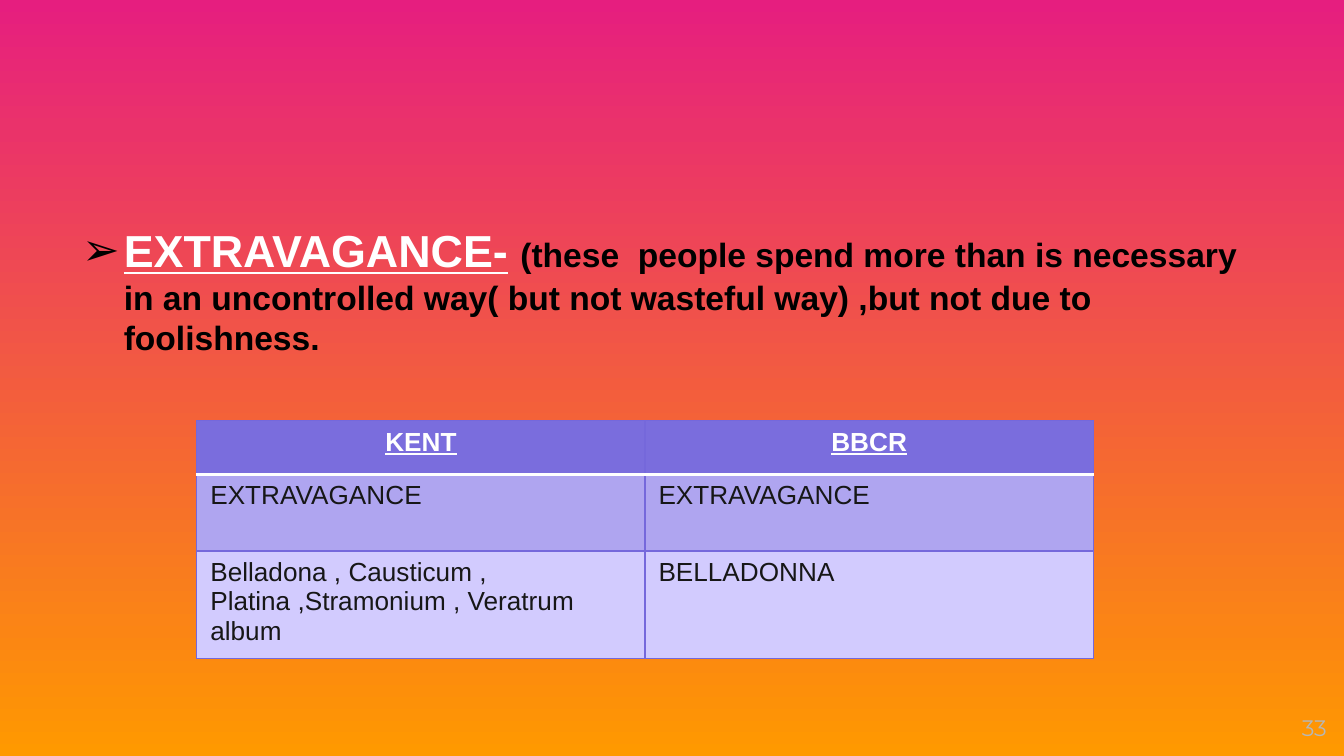
from dataclasses import dataclass

from lxml import etree
from pptx import Presentation, util as u
from pptx.dml.color import RGBColor
from pptx.enum import text
from pptx.oxml.ns import qn

WIDTH = 10
HEIGHT = WIDTH * 9 / 16
WHITE, BLACK, INK, GREY = "FFFFFF", "000000", "171717", "B7B7B7"
PINK, ORANGE = "E61E7F", "FF9900"
VIOLET, LILAC, PALE, GRID = "7A6DDD", "AFA5F0", "D2CBFE", "7568DB"


@dataclass(frozen=True)
class Area:
    """Percentages of the slide's width and height."""
    left: float
    top: float
    width: float
    height: float

    def lengths(self) -> tuple:
        across, down = WIDTH / 100, HEIGHT / 100
        return (u.Inches(self.left * across), u.Inches(self.top * down),
                u.Inches(self.width * across), u.Inches(self.height * down))


@dataclass(frozen=True)
class RemedyRow:
    kent: str
    bbcr: str
    height: float
    fill: str
    heading: bool = False


REMEDIES = (
    RemedyRow("KENT", "BBCR", 0.4, VIOLET, heading=True),
    RemedyRow("EXTRAVAGANCE", "EXTRAVAGANCE", 0.57, LILAC),
    RemedyRow("Belladona , Causticum , Platina ,Stramonium , Veratrum album",
              "BELLADONNA", 0.8, PALE),
)


def colour(value: str) -> RGBColor:
    return RGBColor.from_string(value)


def write(paragraph, words: str, *, size: float, ink: str, face: str = "Arial",
          bold: bool = False, underline: bool = False) -> None:
    run = paragraph.add_run()
    run.text = words
    font = run.font
    font.size, font.name = u.Pt(size), face
    font.bold, font.underline = bold, underline
    font.color.rgb = colour(ink)


def add_bullet(paragraph, symbol: str, ink: str, indent: float) -> None:
    properties = paragraph._p.get_or_add_pPr()
    properties.set("marL", str(u.Inches(indent)))
    properties.set("indent", str(-u.Inches(indent)))
    bullet_ink = etree.SubElement(properties, qn("a:buClr"))
    etree.SubElement(bullet_ink, qn("a:srgbClr"), val=ink)
    etree.SubElement(properties, qn("a:buFont"), typeface="Arial")
    etree.SubElement(properties, qn("a:buChar"), char=symbol)


def set_borders(cell, top: tuple[str, float], bottom: tuple[str, float]) -> None:
    properties = cell._tc.get_or_add_tcPr()
    edges = {"L": (GRID, 0.75), "R": (GRID, 0.75), "T": top, "B": bottom}
    for position, (side, (ink, width)) in enumerate(edges.items()):
        edge = etree.Element(qn(f"a:ln{side}"), w=str(u.Pt(width)))
        fill = etree.SubElement(edge, qn("a:solidFill"))
        etree.SubElement(fill, qn("a:srgbClr"), val=ink)
        properties.insert(position, edge)


def paint_background(slide) -> None:
    fill = slide.background.fill
    fill.gradient()
    fill.gradient_angle = 270
    for stop, ink, place in zip(fill.gradient_stops, (PINK, ORANGE), (0, 1)):
        stop.color.rgb = colour(ink)
        stop.position = place


def add_definition(slide, area: Area) -> None:
    frame = slide.shapes.add_textbox(*area.lengths()).text_frame
    frame.word_wrap = True
    definition = frame.paragraphs[0]
    add_bullet(definition, "➢", BLACK, 0.31)
    write(definition, "EXTRAVAGANCE-", size=24, ink=WHITE, bold=True, underline=True)
    write(definition, " ", size=24, ink=WHITE, bold=True)
    write(definition, "(these  people spend more than is necessary in an uncontrolled way"
          "( but not wasteful way) ,but not due to foolishness.",
          size=18, ink=BLACK, bold=True)


def add_remedies(slide, area: Area, remedies: tuple[RemedyRow, ...]) -> None:
    table = slide.shapes.add_table(len(remedies), 2, *area.lengths()).table
    for index, remedy in enumerate(remedies):
        table.rows[index].height = u.Inches(remedy.height)
        below_heading = index > 0 and remedies[index - 1].heading
        top = (WHITE, 2) if below_heading else (GRID, 0.75)
        bottom = (WHITE, 2) if remedy.heading else (GRID, 0.75)
        for cell, words in zip(table.rows[index].cells, (remedy.kent, remedy.bbcr)):
            cell.fill.solid()
            cell.fill.fore_color.rgb = colour(remedy.fill)
            set_borders(cell, top, bottom)
            entry = cell.text_frame.paragraphs[0]
            entry.alignment = text.PP_ALIGN.CENTER if remedy.heading else text.PP_ALIGN.LEFT
            write(entry, words, size=14, ink=WHITE if remedy.heading else INK,
                  bold=remedy.heading, underline=remedy.heading)


def add_page_number(slide, area: Area, number: str) -> None:
    frame = slide.shapes.add_textbox(*area.lengths()).text_frame
    frame.word_wrap = True
    frame.vertical_anchor = text.MSO_ANCHOR.MIDDLE
    frame.margin_left = frame.margin_right = frame.margin_top = frame.margin_bottom = 0
    frame.paragraphs[0].alignment = text.PP_ALIGN.RIGHT
    write(frame.paragraphs[0], number, size=12, ink=GREY, face="Montserrat")


def main() -> None:
    deck = Presentation()
    deck.slide_width, deck.slide_height = u.Inches(WIDTH), u.Inches(HEIGHT)
    slide = deck.slides.add_slide(deck.slide_layouts[6])
    paint_background(slide)
    add_page_number(slide, Area(92.73, 92.35, 6, 7.65), "33")
    add_definition(slide, Area(5.13, 28.65, 89.8, 20))
    table_share = 100 * sum(remedy.height for remedy in REMEDIES) / HEIGHT
    add_remedies(slide, Area(14.65, 55.65, 66.7, table_share), REMEDIES)
    deck.save("out.pptx")


if __name__ == "__main__":
    main()
